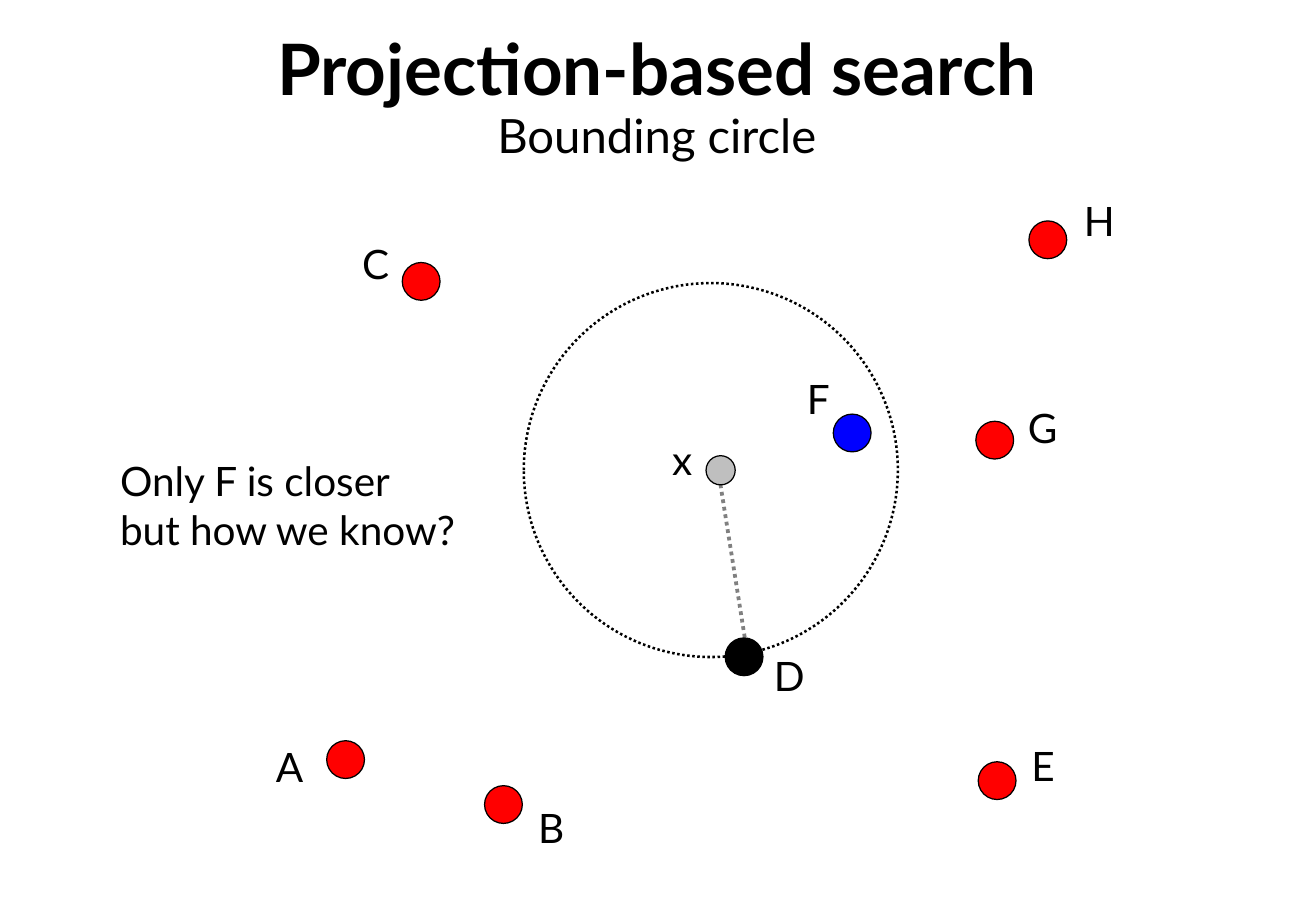
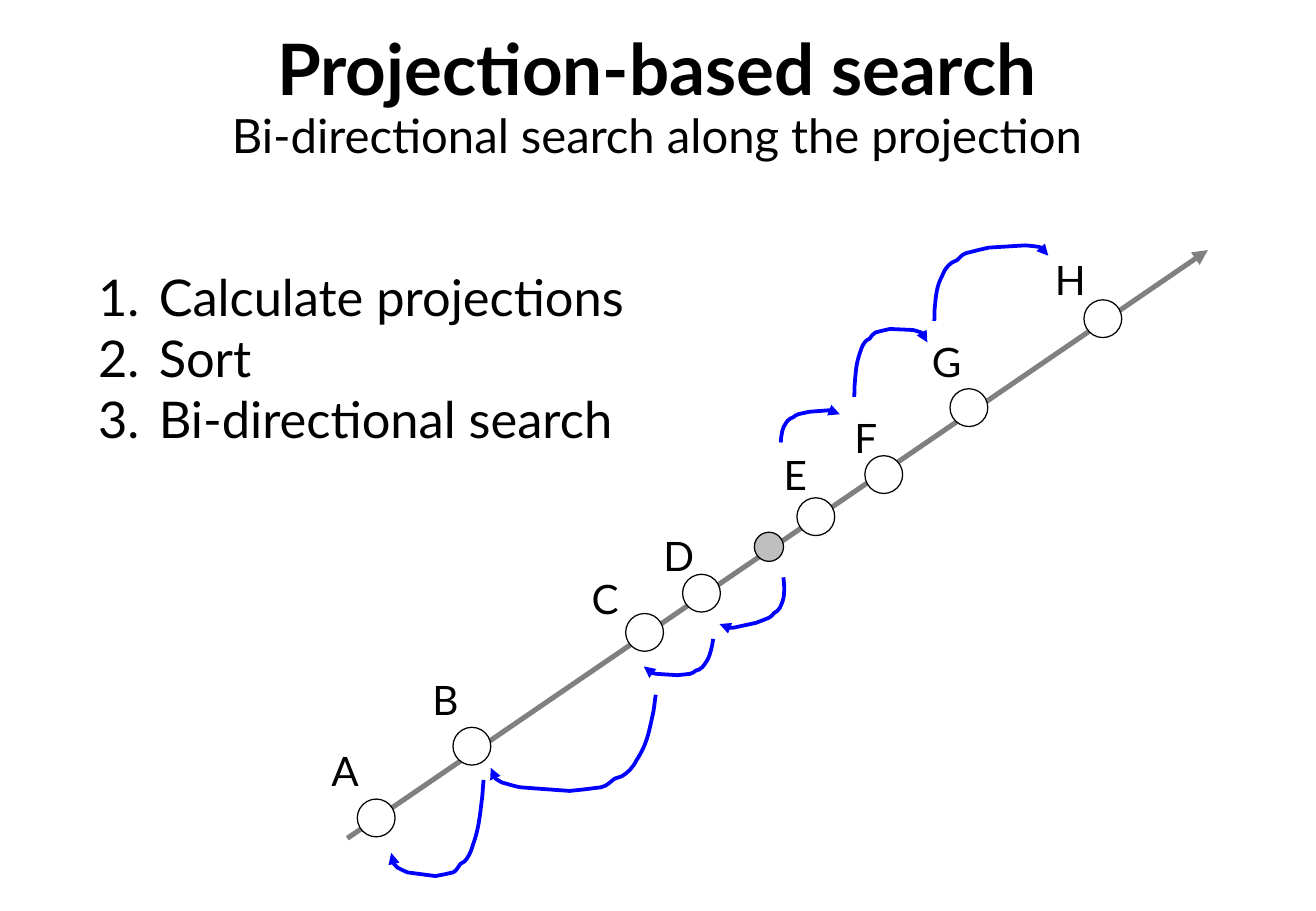
from dataclasses import dataclass

from lxml.etree import SubElement
from pptx import Presentation
from pptx.dml.color import RGBColor
from pptx.enum.dml import MSO_LINE
from pptx.enum.shapes import MSO_CONNECTOR, MSO_SHAPE
from pptx.enum.text import MSO_ANCHOR, PP_ALIGN
from pptx.oxml.ns import qn
from pptx.util import Cm, Pt


@dataclass(frozen=True)
class Theme:
    font: str = "Lato"
    black: RGBColor = RGBColor(0, 0, 0)
    white: RGBColor = RGBColor(255, 255, 255)
    red: RGBColor = RGBColor(255, 0, 0)
    blue: RGBColor = RGBColor(0, 0, 255)
    gray: RGBColor = RGBColor(0x80, 0x80, 0x80)
    silver: RGBColor = RGBColor(0xBF, 0xBF, 0xBF)
    title: int = 42
    subtitle: int = 28
    steps: int = 30
    body: int = 24


THEME = Theme()
DOT, QUERY_DOT = 0.79, 0.61  # diameters in cm


def add_words(slide, left, top, width, height, lines, size, inset=True):
    """Add a black text box with one paragraph per line and return its frame."""
    frame = slide.shapes.add_textbox(Cm(left), Cm(top), Cm(width), Cm(height)).text_frame
    frame.word_wrap = True
    if not inset:
        frame.margin_left = frame.margin_right = frame.margin_top = frame.margin_bottom = 0
    for index, line in enumerate(lines):
        paragraph = frame.add_paragraph() if index else frame.paragraphs[0]
        run = paragraph.add_run()
        run.text = line
        run.font.name, run.font.size = THEME.font, Pt(size)
        run.font.color.rgb = THEME.black
    return frame


def add_circle(slide, left, top, diameter, fill=None, line_width=0.75):
    circle = slide.shapes.add_shape(
        MSO_SHAPE.OVAL, Cm(left), Cm(top), Cm(diameter), Cm(diameter))
    circle.shadow.inherit = False
    if fill is None:
        circle.fill.background()
    else:
        circle.fill.solid()
        circle.fill.fore_color.rgb = fill
    circle.line.color.rgb, circle.line.width = THEME.black, Pt(line_width)
    return circle


# Per slide: subtitle, line (start, end, width, dash), query dot,
# and for each point its label place, dot place and dot fill.
diagrams = [
    ("Bounding circle",
     ((15.06, 10.13), (15.57, 13.34), 2.25, MSO_LINE.ROUND_DOT),
     (14.76, 9.53),
     {"A": ((5.77, 15.52), (6.83, 15.49), THEME.red),
      "B": ((11.25, 16.79), (10.13, 16.43), THEME.red),
      "C": ((7.57, 5.0), (8.41, 5.49), THEME.red),
      "D": ((16.18, 13.61), (15.16, 13.34), THEME.black),
      "E": ((21.56, 15.49), (20.45, 15.93), THEME.red),
      "F": ((16.87, 7.82), (17.42, 8.66), THEME.blue),
      "G": ((21.49, 8.43), (20.4, 8.81), THEME.red),
      "H": ((22.66, 4.09), (21.51, 4.62), THEME.red)}),
    ("Bi-directional search along the projection",
     ((7.26, 17.53), (25.25, 5.23), 3, None),
     (15.77, 11.13),
     {"A": ((6.93, 15.6), (7.47, 16.71), THEME.white),
      "B": ((9.04, 14.12), (9.47, 15.21), THEME.white),
      "C": ((12.37, 12.01), (13.08, 12.83), THEME.white),
      "D": ((13.87, 11.1), (14.27, 12.01), THEME.white),
      "E": ((16.38, 9.42), (16.66, 10.41), THEME.white),
      "F": ((17.86, 8.64), (18.08, 9.53), THEME.white),
      "G": ((19.48, 7.04), (19.86, 8.13), THEME.white),
      "H": ((22.05, 5.33), (22.66, 6.27), THEME.white)}),
]

prs = Presentation()
prs.slide_width, prs.slide_height = Cm(27.51), Cm(19.05)

for subtitle, (start, end, line_width, dash), query, points in diagrams:
    slide = prs.slides.add_slide(prs.slide_layouts[6])

    heading_frame = add_words(
        slide, 1.93, 0.66, 23.6, 2.79, ["Projection-based search"], THEME.title, inset=False)
    heading_frame.vertical_anchor = MSO_ANCHOR.MIDDLE
    heading = heading_frame.paragraphs[0]
    heading.alignment, heading.line_spacing = PP_ALIGN.CENTER, 0.93
    heading.runs[0].font.bold = True
    heading.add_line_break()
    second_line = heading.add_run()
    second_line.text = subtitle
    second_line.font.name, second_line.font.size = THEME.font, Pt(THEME.subtitle)
    second_line.font.color.rgb = THEME.black

    axis = slide.shapes.add_connector(
        MSO_CONNECTOR.STRAIGHT, *(Cm(value) for value in start + end))
    axis.line.color.rgb, axis.line.width = THEME.gray, Pt(line_width)
    if dash:
        axis.line.dash_style = dash
    SubElement(axis.element.spPr, qn("a:effectLst"))

    add_circle(slide, *query, QUERY_DOT, THEME.silver)
    for letter, (label_place, dot_place, fill) in points.items():
        add_circle(slide, *dot_place, DOT, fill)
        add_words(slide, *label_place, 1, 1.02, [letter], THEME.body, inset=False)

circle_slide, projection_slide = prs.slides

# Bounding circle
bounding_circle = add_circle(circle_slide, 10.95, 5.92, 7.82, line_width=1.5)
bounding_circle.line.dash_style = MSO_LINE.ROUND_DOT
add_words(circle_slide, 14.05, 9.09, 1, 1.02, ["x"], THEME.body, inset=False)
add_words(circle_slide, 2.26, 9.42, 8, 2.31,
          ["Only F is closer", "but how we know?"], THEME.body)

# Search along the projection
steps = add_words(projection_slide, 1.8, 5.44, 12, 4.11,
                  ["Calculate projections", "Sort", "Bi-directional search"], THEME.steps)
for step in steps.paragraphs:
    properties = step._p.get_or_add_pPr()
    properties.set("marL", str(Cm(1.27)))
    properties.set("indent", str(-Cm(1.27)))
    SubElement(properties, qn("a:buFont"), typeface=THEME.font)
    SubElement(properties, qn("a:buAutoNum"), type="arabicPeriod")

# One hop: a start point, then three Bézier points per curve, on a 136 by 79 grid.
HOP_GRID = (136, 79)
HOP_START = (136, 0)
HOP_CURVES = [
    (135, 5), (135, 9), (134, 14),
    (130, 32), (129, 40), (120, 54),
    (117, 60), (113, 64), (108, 67),
    (106, 68), (104, 68), (102, 69),
    (99, 71), (96, 75), (91, 76),
    (75, 78), (84, 77), (65, 79),
    (51, 78), (37, 77), (24, 76),
    (19, 75), (9, 72), (9, 72),
    (8, 71), (5, 70), (4, 69),
    (3, 67), (3, 65), (2, 63),
    (2, 62), (1, 61), (0, 60),
]
hops = [  # left, top, width, height, rotation
    (14.96, 12.27, 1.55, 0.76, 344.2),
    (13.46, 13.36, 1.45, 0.76, 0),
    (10.26, 14.53, 3.45, 2.01, 0),
    (8.18, 16.31, 1.93, 2.01, 0),
    (16.28, 8.61, 1.3, 0.56, 172.5),
    (17.81, 6.88, 1.6, 1.37, 176.3),
    (19.43, 5.18, 2.54, 1.37, 172.5),
]
arrows = [axis]
for left, top, width, height, rotation in hops:
    scale = (Cm(width) / HOP_GRID[0], Cm(height) / HOP_GRID[1])
    builder = projection_slide.shapes.build_freeform(*HOP_START, scale=scale)
    builder.add_line_segments(HOP_CURVES, close=False)
    hop = builder.convert_to_shape(Cm(left), Cm(top))
    hop.rotation = rotation
    hop.shadow.inherit = False
    hop.fill.background()
    hop.line.color.rgb, hop.line.width = THEME.blue, Pt(2.25)
    outline = hop.element.spPr.find(".//" + qn("a:path"))
    for index, segment in enumerate(outline.findall(qn("a:lnTo"))):
        if index % 3 == 0:
            curve = SubElement(outline, qn("a:cubicBezTo"))
        curve.append(segment[0])
        outline.remove(segment)
    arrows.append(hop)

for arrow in arrows:
    SubElement(arrow.element.spPr.find(qn("a:ln")), qn("a:tailEnd"), type="triangle")

prs.save("out.pptx")
